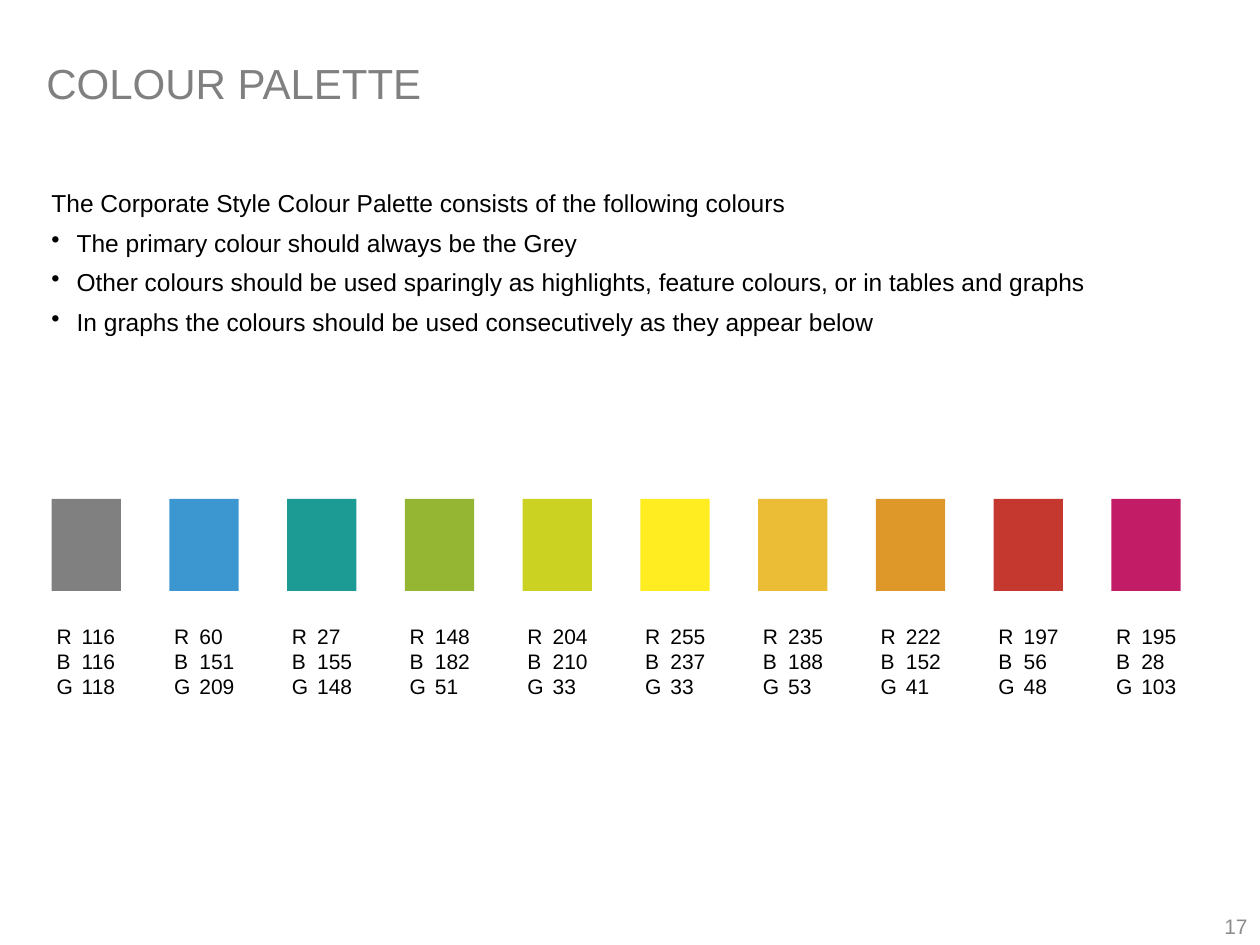
from copy import deepcopy

from lxml import etree
from pptx import Presentation
from pptx.dml.color import RGBColor
from pptx.enum.shapes import MSO_SHAPE
from pptx.enum.text import MSO_ANCHOR, MSO_AUTO_SIZE, PP_ALIGN
from pptx.oxml.ns import qn
from pptx.util import Inches, Pt

RECT = MSO_SHAPE.RECTANGLE
TOP, MIDDLE, BOTTOM = MSO_ANCHOR.TOP, MSO_ANCHOR.MIDDLE, MSO_ANCHOR.BOTTOM
LEFT, RIGHT = PP_ALIGN.LEFT, PP_ALIGN.RIGHT
GROW = MSO_AUTO_SIZE.SHAPE_TO_FIT_TEXT

TITLE = "COLOUR PALETTE"
PAGE = "17"
INTRO = "The Corporate Style Colour Palette consists of the following colours"
RULES = [
    "The primary colour should always be the Grey",
    "Other colours should be used sparingly as highlights, feature colours, or in tables and graphs",
    "In graphs the colours should be used consecutively as they appear below",
]
GREY = "808080"
PALETTE = [
    (116, 116, 118), (60, 151, 209), (27, 155, 148), (148, 182, 51),
    (204, 210, 33), (255, 237, 33), (235, 188, 53), (222, 152, 41),
    (197, 56, 48), (195, 28, 103),
]
MARKS = "RBG"
TABS = (0.2, 0.29)

# Swatch row, in inches
START, END = 0.41, 8.82
PITCH = (END - START) / (len(PALETTE) - 1)
SWATCH_TOP, SWATCH_W, SWATCH_H = 3.96, 0.55, 0.73
LABEL_TOP, LABEL_W, LABEL_H = 4.9, 0.68, 0.71
LABEL_SHIFT = 0.06


def rgb(code):
    return RGBColor.from_string(code)


def indent(para, bullet):
    """Hang the paragraph, with a bullet if asked."""
    props = para._p.get_or_add_pPr()
    props.set("marL", str(Inches(0.2)))
    props.set("indent", str(-Inches(0.2)))
    if bullet:
        etree.SubElement(props, qn("a:buChar")).set("char", "•")


def add_tabs(para, stops):
    tabs = etree.SubElement(para._p.get_or_add_pPr(), qn("a:tabLst"))
    for stop in stops:
        tab = etree.SubElement(tabs, qn("a:tab"))
        tab.set("pos", str(Inches(stop)))
        tab.set("algn", "l")


def add_text(slide, lines, box, size=12, color="000000", align=LEFT,
             anchor=TOP, wrap=False, after=None, bullets=None, tabs=()):
    """Add a text box; bullets holds one flag per line of a hanging list."""
    frame = slide.shapes.add_textbox(*map(Inches, box)).text_frame
    frame.word_wrap = wrap
    frame.vertical_anchor = anchor
    if not wrap:
        frame.auto_size = GROW
    for i, line in enumerate(lines):
        para = frame.add_paragraph() if i else frame.paragraphs[0]
        para.text = line
        if bullets:
            indent(para, bullets[i])
        if tabs:
            add_tabs(para, tabs)
        para.alignment = align
        if after is not None:
            para.space_after = Pt(after)
        for run in para.runs:
            run.font.name = "Arial"
            run.font.size = Pt(size)
            run.font.color.rgb = rgb(color)
        for gap in para._p.findall(qn("a:br")):
            gap.insert(0, deepcopy(para.runs[0]._r.rPr))


def add_swatch(slide, left, values, fill):
    box = (left, SWATCH_TOP, SWATCH_W, SWATCH_H)
    shape = slide.shapes.add_shape(RECT, *map(Inches, box))
    shape.shadow.inherit = False
    shape.fill.solid()
    shape.fill.fore_color.rgb = rgb(fill)
    shape.line.fill.background()
    label = "\v".join(f"{mark}\t{value}" for mark, value in zip(MARKS, values))
    add_text(slide, [label], (left - LABEL_SHIFT, LABEL_TOP, LABEL_W, LABEL_H),
             tabs=TABS)


def main():
    deck = Presentation()
    deck.slide_width, deck.slide_height = Inches(10), Inches(7.5)
    slide = deck.slides.add_slide(deck.slide_layouts[6])

    add_text(slide, [TITLE], (0.27, 0.21, 9, 0.89), size=24, color=GREY,
             anchor=MIDDLE, wrap=True)
    add_text(slide, [INTRO] + RULES, (0.31, 1.44, 8.44, 1.3), size=14,
             after=6, bullets=[False] + [True] * len(RULES))
    for i, values in enumerate(PALETTE):
        fill = "%02X%02X%02X" % values if i else GREY
        add_swatch(slide, START + i * PITCH, values, fill)
    add_text(slide, [PAGE], (9.41, 7.1, 0.59, 0.4), color="8C8C8C",
             align=RIGHT, anchor=BOTTOM, wrap=True)

    deck.save("out.pptx")


if __name__ == "__main__":
    main()
